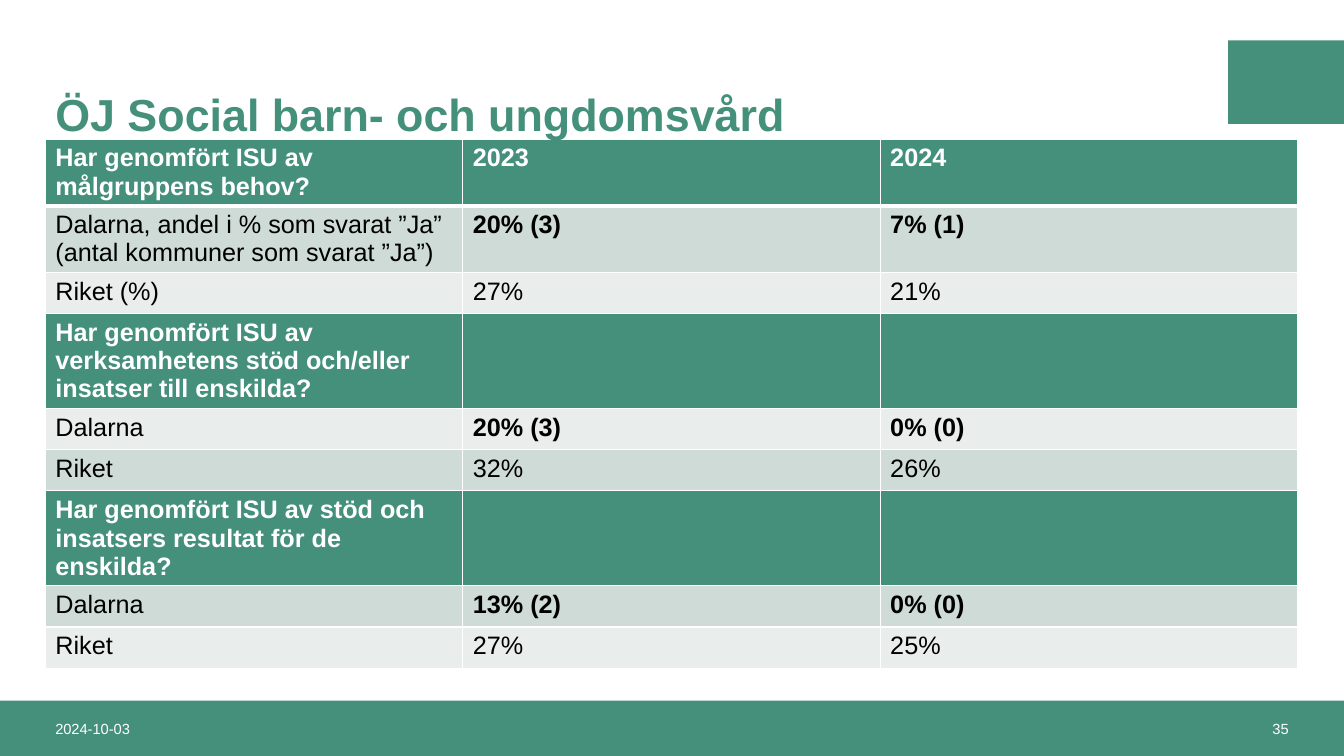
"""Builds a slide with a table of follow-up results for child and youth welfare."""
import pptx
import pptx.util
import pptx.dml.color
import pptx.enum.shapes
import pptx.enum.text
import pptx.oxml
import pptx.oxml.ns
from pptx.util import Inches

TITLE = "ÖJ Social barn- och ungdomsvård"
DATE = "2024-10-03"
NUMBER = "35"
ROWS = [
    ("Har genomfört ISU av målgruppens behov?", "2023", "2024"),
    ("Dalarna, andel i % som svarat ”Ja” (antal kommuner som svarat ”Ja”)", "20% (3)", "7% (1)"),
    ("Riket (%)", "27%", "21%"),
    ("Har genomfört ISU av verksamhetens stöd och/eller insatser till enskilda?", "", ""),
    ("Dalarna", "20% (3)", "0% (0)"),
    ("Riket", "32%", "26%"),
    ("Har genomfört ISU av stöd och insatsers resultat för de enskilda?", "", ""),
    ("Dalarna", "13% (2)", "0% (0)"),
    ("Riket", "27%", "25%"),
]
GROUP = 3
THEME = {
    "font": "Arial", "green": "45907A", "white": "FFFFFF", "black": "000000",
    "bands": ("E9EEEC", "CFDBD7"), "title": 32, "body": 18, "footer": 10.5,
}
WIDTH, HEIGHT, MARGIN = 13.33, 7.5, 0.45
FOOTER_TOP, FOOTER_HEIGHT, FOOTER_WIDTH = 6.95, 0.55, 3.47
TABLE_TOP, COL_WIDTH, ROW_HEIGHT = 1.38, 4.14, 0.41
ALIGN = pptx.enum.text.PP_ALIGN


def rgb(value):
    return pptx.dml.color.RGBColor.from_string(value)


def write(p, text, size, color, bold=False):
    p.font.size = pptx.util.Pt(size)
    if text:
        r = p.add_run()
        r.text = text
        fmt = {"name": THEME["font"], "size": pptx.util.Pt(size), "bold": bold}
        for key, value in fmt.items():
            setattr(r.font, key, value)
        r.font.color.rgb = rgb(color)


def add_block(s, *box):
    sp = s.shapes.add_shape(pptx.enum.shapes.MSO_SHAPE.RECTANGLE, *map(Inches, box))
    sp.shadow.inherit = False
    sp.fill.solid()
    sp.fill.fore_color.rgb = rgb(THEME["green"])
    sp.line.fill.background()


def add_text(s, box, text, size, color, bold=False, align=ALIGN.LEFT, spacing=1.0):
    tf = s.shapes.add_textbox(*map(Inches, box)).text_frame
    tf.word_wrap = True
    tf.vertical_anchor = pptx.enum.text.MSO_ANCHOR.MIDDLE
    p = tf.paragraphs[0]
    p.alignment, p.line_spacing = align, spacing
    write(p, text, size, color, bold)


def add_borders(cell, widths):
    tc_pr = cell._tc.get_or_add_tcPr()
    for side, width in widths.items():
        tc_pr.append(pptx.oxml.parse_xml(
            f'<a:ln{side} {pptx.oxml.ns.nsdecls("a")} w="{pptx.util.Pt(width)}"><a:solidFill>'
            f'<a:srgbClr val="{THEME["white"]}"/></a:solidFill></a:ln{side}>'))


def add_results(s):
    cols = len(ROWS[0])
    box = (MARGIN, TABLE_TOP, cols * COL_WIDTH, len(ROWS) * ROW_HEIGHT)
    table = s.shapes.add_table(len(ROWS), cols, *map(Inches, box)).table
    for col in table.columns:
        col.width = Inches(COL_WIDTH)
    for i, row in enumerate(ROWS):
        table.rows[i].height = Inches(ROW_HEIGHT)
        heading, regional = i % GROUP == 0, i % GROUP == 1
        for j, text in enumerate(row):
            cell = table.cell(i, j)
            add_borders(cell, {"L": 1, "R": 1, "T": 3 if i == 1 else 1, "B": 3 if i == 0 else 1})
            cell.fill.solid()
            cell.fill.fore_color.rgb = rgb(THEME["green"] if heading else THEME["bands"][i % 2])
            write(cell.text_frame.paragraphs[0], text, THEME["body"],
                  THEME["white" if heading else "black"], heading or (regional and j > 0))


def main():
    prs = pptx.Presentation()
    prs.slide_width, prs.slide_height = Inches(WIDTH), Inches(HEIGHT)
    s = prs.slides.add_slide(prs.slide_layouts[6])
    add_block(s, 12.18, 0.4, WIDTH - 12.18, 0.83)
    add_block(s, 0, FOOTER_TOP, WIDTH, FOOTER_HEIGHT)
    add_results(s)
    right = WIDTH - MARGIN - FOOTER_WIDTH
    for left, text, align in ((MARGIN, DATE, ALIGN.LEFT), (right, NUMBER, ALIGN.RIGHT)):
        add_text(s, (left, FOOTER_TOP, FOOTER_WIDTH, FOOTER_HEIGHT), text,
                 THEME["footer"], THEME["white"], align=align)
    add_text(s, (MARGIN, 0.5, 11.39, 1.32), TITLE, THEME["title"], THEME["green"],
             bold=True, spacing=0.9)
    prs.save("out.pptx")


if __name__ == "__main__":
    main()
